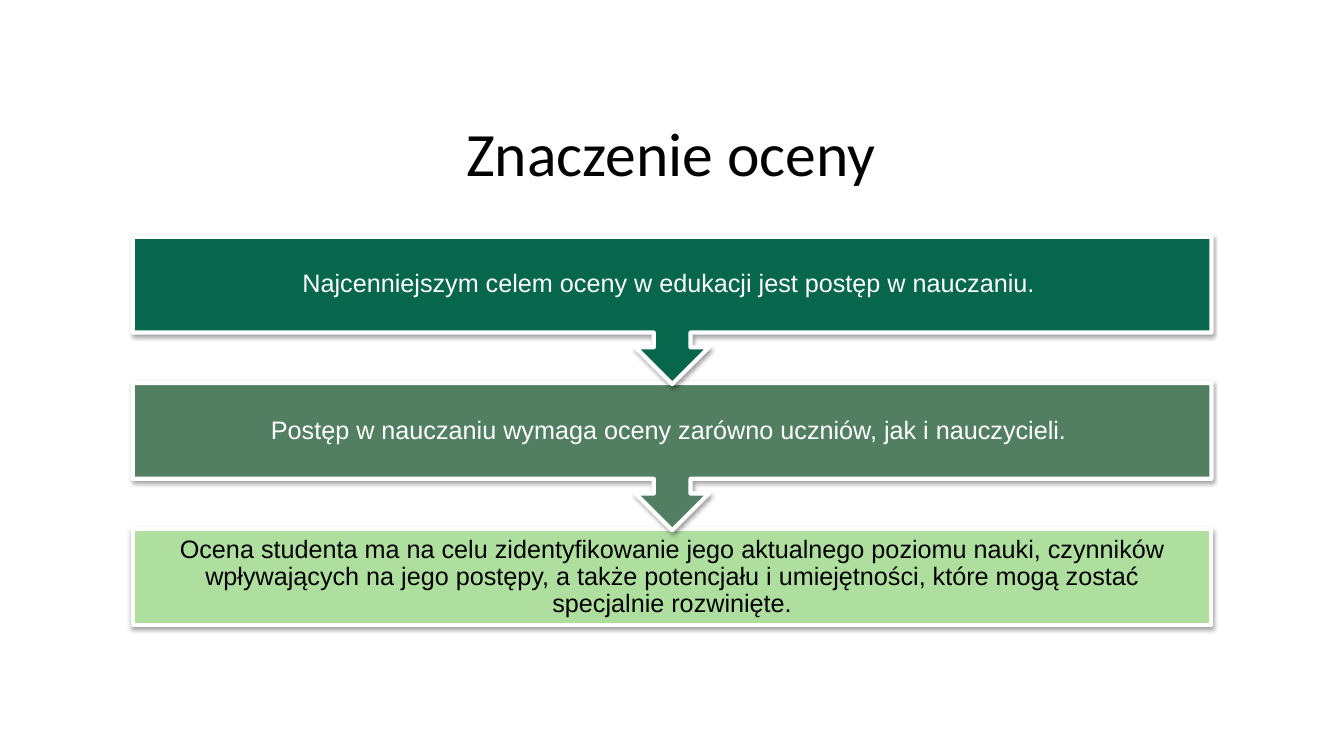
from lxml.etree import SubElement
from pptx import Presentation
from pptx.dml.color import RGBColor
from pptx.enum.shapes import MSO_SHAPE
from pptx.enum.text import MSO_ANCHOR, MSO_AUTO_SIZE, PP_ALIGN
from pptx.oxml.ns import qn
from pptx.util import Cm, Pt

COLORS = {
    "black": "000000",
    "white": "FFFFFF",
    "dark_green": "07674D",
    "mid_green": "527F62",
    "light_green": "AFDF9F",
}
FRAME_FORMAT = {
    "word_wrap": True,
    "auto_size": MSO_AUTO_SIZE.NONE,
    "vertical_anchor": MSO_ANCHOR.MIDDLE,
}
PARAGRAPH_FORMAT = {"alignment": PP_ALIGN.CENTER, "line_spacing": 0.9}
TITLE_FONT = {"name": "Calibri", "size": Pt(44)}
STEP_FONT = {"name": "Arial", "size": Pt(18)}
STEP_MARGINS = {
    f"margin_{side}": Cm(0.36) for side in ("left", "top", "right", "bottom")
}
STEPS = [
    ("Najcenniejszym celem oceny w edukacji jest postęp w nauczaniu. ",
     "dark_green", "white"),
    ("Postęp w nauczaniu wymaga oceny zarówno uczniów, jak i nauczycieli. ",
     "mid_green", "white"),
    ("Ocena studenta ma na celu zidentyfikowanie jego aktualnego poziomu nauki, "
     "czynników wpływających na jego postępy, a także potencjału i umiejętności, "
     "które mogą zostać specjalnie rozwinięte.",
     "light_green", "black"),
]


def rgb(name):
    """Return the named palette colour."""
    return RGBColor.from_string(COLORS[name])


def apply_format(target, values):
    """Set every attribute in the dict on the target."""
    for name, value in values.items():
        setattr(target, name, value)


def write_text(shape, text, font_format, color):
    """Write one centred, formatted paragraph into the shape."""
    frame = shape.text_frame
    apply_format(frame, FRAME_FORMAT)
    paragraph = frame.paragraphs[0]
    paragraph.text = text
    apply_format(paragraph, PARAGRAPH_FORMAT)
    apply_format(paragraph.font, font_format)
    paragraph.font.color.rgb = rgb(color)


def add_soft_shadow(shape):
    """Give the shape a soft shadow that falls straight down."""
    shape.shadow.inherit = False
    effects = shape._element.spPr.find(qn("a:effectLst"))
    shadow = SubElement(effects, qn("a:outerShdw"), {
        "blurRad": str(Pt(3.1)), "dist": str(Pt(1.6)),
        "dir": "5400000", "rotWithShape": "0",
    })
    color = SubElement(shadow, qn("a:srgbClr"), val=COLORS["black"])
    SubElement(color, qn("a:alpha"), val="37000")


def add_title(slide, left, top, width, height):
    """Place the slide title in its box."""
    title = slide.shapes.title
    apply_format(title, {"left": left, "top": top, "width": width, "height": height})
    write_text(title, "Znaczenie oceny", TITLE_FONT, "black")


def add_step_flow(slide, left, top, width, height):
    """Stack the steps in the box, each pointing down to the next."""
    body_height = Cm(2.41)
    callout_height = Cm(3.71)
    pitch = (height - body_height) / (len(STEPS) - 1)
    for index, (text, fill, color) in reversed(list(enumerate(STEPS))):
        is_last = index == len(STEPS) - 1
        kind = MSO_SHAPE.RECTANGLE if is_last else MSO_SHAPE.DOWN_ARROW_CALLOUT
        step = slide.shapes.add_shape(
            kind, left, int(top + index * pitch), width,
            body_height if is_last else callout_height)
        if not is_last:
            for position, value in enumerate((0.25, 0.25, 0.25, 0.65)):
                step.adjustments[position] = value
        step.fill.solid()
        step.fill.fore_color.rgb = rgb(fill)
        step.line.color.rgb = rgb("white")
        step.line.width = Pt(3)
        add_soft_shadow(step)
        apply_format(step.text_frame, STEP_MARGINS)
        write_text(step, text, STEP_FONT, color)


def main():
    """Build and save the presentation."""
    presentation = Presentation()
    apply_format(presentation, {"slide_width": Cm(33.87), "slide_height": Cm(19.05)})
    slide = presentation.slides.add_slide(presentation.slide_layouts[5])
    add_title(slide, Cm(2.31), Cm(2.31), Cm(29.21), Cm(3.28))
    add_step_flow(slide, Cm(3.35), Cm(5.97), Cm(27.18), Cm(9.78))
    presentation.save("out.pptx")


if __name__ == "__main__":
    main()
